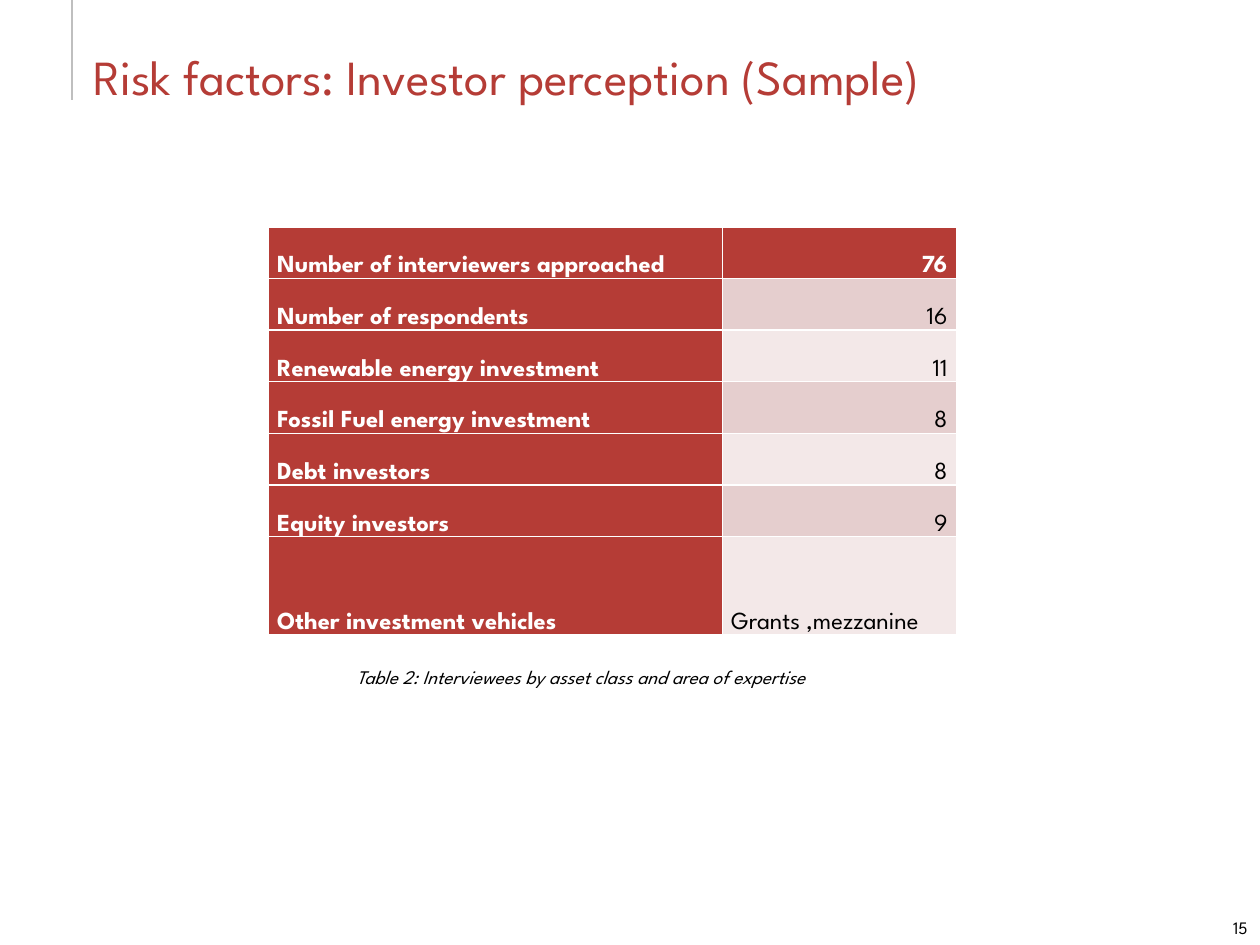
from lxml import etree
from pptx import Presentation
from pptx.dml.color import RGBColor
from pptx.enum.shapes import MSO_CONNECTOR
from pptx.enum.text import MSO_ANCHOR, MSO_AUTO_SIZE, PP_ALIGN
from pptx.oxml.ns import qn
from pptx.util import Inches, Pt

LEFT, RIGHT = PP_ALIGN.LEFT, PP_ALIGN.RIGHT
TOP, MID, LOW = MSO_ANCHOR.TOP, MSO_ANCHOR.MIDDLE, MSO_ANCHOR.BOTTOM
GROW, FIXED = MSO_AUTO_SIZE.SHAPE_TO_FIT_TEXT, MSO_AUTO_SIZE.NONE
LINE = MSO_CONNECTOR.STRAIGHT
FONT = "League Spartan"
WIDE, HIGH = 10, 7.5
HUES = {"red": "B53C36", "rose": "E5CECE", "blush": "F3E8E8",
        "white": "FFFFFF", "black": "000000", "gray": "BFBFBF"}
ROWS = [
    ("Number of interviewers approached", "76"),
    ("Number of respondents", "16"),
    ("Renewable energy investment", "11"),
    ("Fossil Fuel energy investment", "8"),
    ("Debt investors", "8"),
    ("Equity investors", "9"),
    ("Other investment vehicles", "Grants ,mezzanine"),
]


def hue(name):
    """Return the named colour."""
    return RGBColor.from_string(HUES[name])


def write(frame, text, size=14, color="black", bold=False, italic=False, align=LEFT):
    """Put one formatted paragraph into a text frame."""
    para = frame.paragraphs[0]
    para.alignment = align
    run = para.add_run()
    run.text = text
    font = run.font
    font.name, font.size = FONT, Pt(size)
    font.bold, font.italic = bold, italic
    font.color.rgb = hue(color)


def place(shape, box):
    """Move a shape to a box given in inches."""
    shape.left, shape.top, shape.width, shape.height = map(Inches, box)


def head(slide, box, text):
    """Fill the title and draw the rule at its left."""
    x, y, w, h = box
    title = slide.shapes.title
    place(title, box)
    frame = title.text_frame
    frame.word_wrap, frame.auto_size = True, FIXED
    frame.vertical_anchor = LOW
    frame.margin_left = Inches(0.07)
    write(frame, text, size=28, color="red")
    edge = Inches(x - 0.1)
    rule = slide.shapes.add_connector(LINE, edge, 0, edge, Inches(y + 0.9 * h))
    rule.line.color.rgb = hue("gray")
    rule.line.width = Pt(1.25)
    etree.SubElement(rule._element.spPr, qn("a:effectLst"))


def grid(slide, box, rows):
    """Build the two-column table with a taller last row."""
    x, y, w, h = box
    table = slide.shapes.add_table(len(rows), 2, *map(Inches, box)).table
    table.first_col = True
    for col, share in zip(table.columns, (0.66, 0.34)):
        col.width = Inches(w * share)
    step = h / (len(rows) + 0.9)
    for r, pair in enumerate(rows):
        last = r == len(rows) - 1
        table.rows[r].height = Inches(step * (1.9 if last else 1))
        for c, text in enumerate(pair):
            cell = table.cell(r, c)
            key = r == 0 or c == 0
            cell.fill.solid()
            cell.fill.fore_color.rgb = hue("red" if key else "rose" if r % 2 else "blush")
            cell.vertical_anchor = LOW
            cell.margin_left = cell.margin_right = Inches(0.07)
            cell.margin_top = cell.margin_bottom = 0
            write(cell.text_frame, text, color="white" if key else "black", bold=key,
                  align=RIGHT if c and not last else LEFT)


def note(slide, box, text, anchor=TOP, **form):
    """Add a small text box."""
    frame = slide.shapes.add_textbox(*map(Inches, box)).text_frame
    frame.word_wrap, frame.auto_size = True, GROW
    frame.vertical_anchor = anchor
    write(frame, text, **form)


def main():
    """Build and save the slide."""
    deck = Presentation()
    deck.slide_width, deck.slide_height = Inches(WIDE), Inches(HIGH)
    slide = deck.slides.add_slide(deck.slide_layouts[5])
    head(slide, (0.67, -0.04, 8.67, 0.93), "Risk factors: Investor perception (Sample)")
    grid(slide, (2.13, 1.8, 5.46, 3.24), ROWS)
    note(slide, (2.73, 5.23, 4.54, 0.29),
         "Table 2: Interviewees by asset class and area of expertise",
         anchor=MID, size=11, italic=True)
    note(slide, (WIDE - 1.7, HIGH - 0.27, 1.7, 0.27), "15", size=10, align=RIGHT)
    deck.save("out.pptx")


if __name__ == "__main__":
    main()
